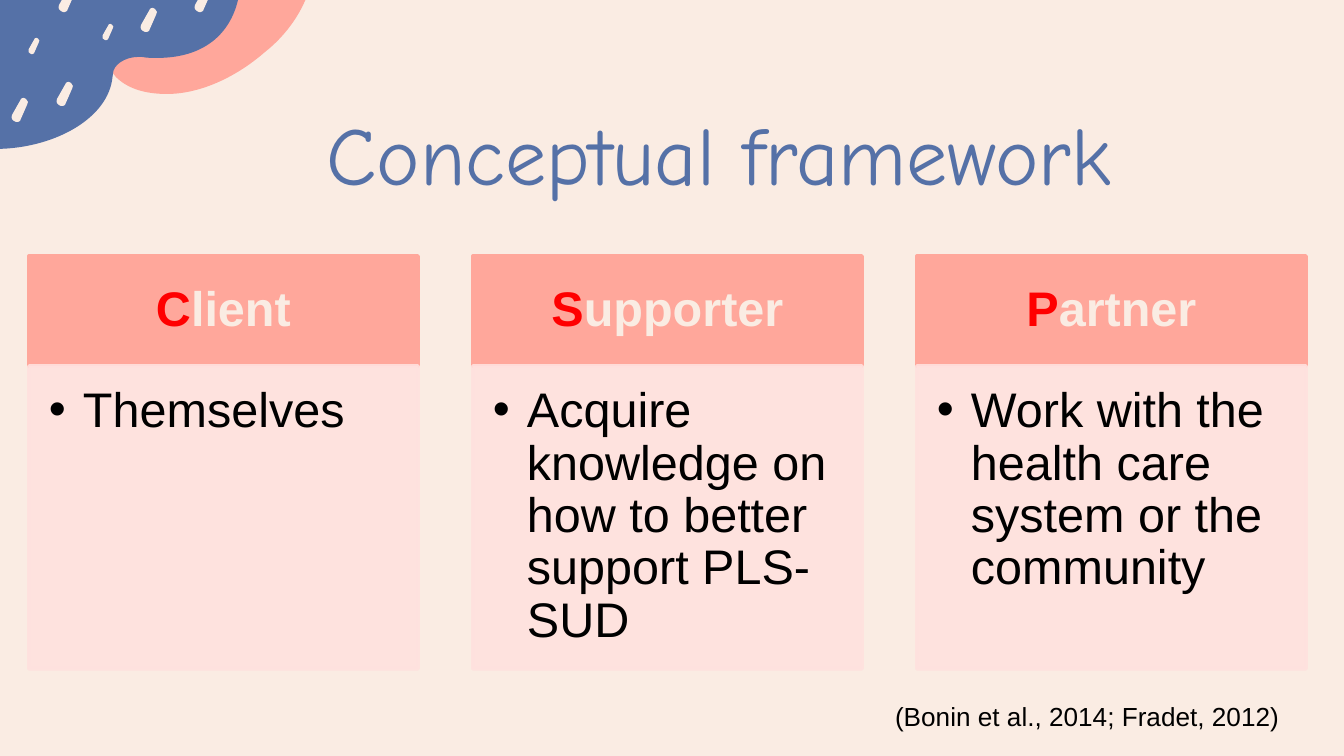
import pptx
import pptx.util
import pptx.dml.color
import pptx.enum.shapes
import pptx.enum.text
import pptx.oxml
import pptx.oxml.ns

PX = 914400 / 134.4  # EMU per px
NS = pptx.oxml.ns.nsdecls("a")
ALIGN = pptx.enum.text.PP_ALIGN
ANCHOR = pptx.enum.text.MSO_ANCHOR
RECT = pptx.enum.shapes.MSO_SHAPE.RECTANGLE


def color(fill, hex_value):
    """Set a solid colour on a fill."""
    fill.solid()
    fill.fore_color.rgb = pptx.dml.color.RGBColor.from_string(hex_value)


def add_text(box, runs, size, font, align, anchor, insets):
    """Add a text box with one paragraph of (text, colour, bold) runs."""
    sp = s.shapes.add_textbox(*[round(v * PX) for v in box])
    tf = sp.text_frame
    tf.word_wrap = True
    tf.vertical_anchor = anchor
    tf.margin_left, tf.margin_top, tf.margin_right, tf.margin_bottom = [
        round(v * PX) for v in insets]
    p = tf.paragraphs[0]
    p.alignment = align
    for text, hex_value, bold in runs:
        r = p.add_run()
        r.text = text
        r.font.size = pptx.util.Pt(size)
        r.font.name = font
        r.font.bold = bold
        color(r.font.fill, hex_value)
    return p


prs = pptx.Presentation()
prs.slide_width, prs.slide_height = round(1344 * PX), round(756 * PX)
s = prs.slides.add_slide(prs.slide_layouts[6])
color(s.background.fill, "FAECE3")

# Corner outlines: a pair is a straight line, six numbers are a Bezier curve
pink = [(13, 103), (-4, 103, -20, 95, -34, 83), (-63, 58, -52, 4, -9, -35),
        (-8, -36), (-1, -42, 3, -50, 4, -56), (8, -93, 34, -134, 78, -165),
        (106, -185, 141, -196, 171, -198), (310, -13),
        (304, 9, 288, 34, 265, 52), (234, 79, 198, 94, 167, 94),
        (146, 94, 128, 89, 116, 77), (114, 75, 113, 73, 112, 71),
        (109, 67, 103, 66, 99, 66), (93, 66, 85, 69, 78, 74), (77, 75),
        (55, 94, 34, 103, 13, 103)]
blue = [(-5, 149), (-12, 149, -17, 149, -23, 149),
        (-54, 145, -81, 136, -99, 121), (-93, -110),
        (-67, -126, -32, -138, 3, -138), (3, -138, 3, -138, 4, -138),
        (56, -138, 101, -120, 125, -93), (130, -87, 138, -83, 146, -83),
        (148, -82), (207, -77, 247, -39, 238, 0), (230, 34, 204, 58, 157, 58),
        (152, 58, 147, 58, 142, 57), (141, 57), (140, 57, 139, 57, 138, 57),
        (125, 57, 113, 65, 113, 74), (113, 77, 112, 78, 112, 81),
        (105, 121, 51, 149, -5, 149)]
dash = [(7, 24), (7, 24, 5, 24, 5, 24), (3, 23), (1, 23, 0, 20, 1, 17), (9, 3),
        (9, 1, 11, 0, 12, 0), (12, 0, 12, 0, 13, 0), (15, 1),
        (17, 3, 18, 5, 16, 7), (9, 23), (8, 23, 8, 24, 7, 24)]

# Corner decoration: outline, colour, left, top, scale
decoration = [(pink, "FFA79B", 0, 0, 1), (blue, "5571A7", 0, 0, 1)]
decoration += [(dash, "FAECE3", x, y, k) for x, y, k in [
    (194, -12, 1), (11, 98, 1), (58, -12, 1), (56, 82, 1), (140, 8, 1),
    (102, 24, 0.67), (28, 38, 0.67)]]
for outline, fill, left, top, scale in decoration:
    segments = [[(round((left + x * scale) * PX), round((top + y * scale) * PX))
                 for x, y in zip(seg[::2], seg[1::2])] for seg in outline]
    knots = [seg[-1] for seg in segments]
    fb = s.shapes.build_freeform(*knots[0])
    fb.add_line_segments(knots[1:], close=True)
    sp = fb.convert_to_shape()
    sp.shadow.inherit = False
    color(sp.fill, fill)
    sp.line.fill.background()
    # Bend the straight segments into their curves
    lines = list(sp._element.iter(pptx.oxml.ns.qn("a:lnTo")))
    for line, seg in zip(lines, segments[1:]):
        if len(seg) == 3:
            pts = "".join('<a:pt x="%d" y="%d"/>' % (x - sp.left, y - sp.top)
                          for x, y in seg)
            curve = pptx.oxml.parse_xml(
                "<a:cubicBezTo %s>%s</a:cubicBezTo>" % (NS, pts))
            line.getparent().replace(line, curve)

# Title
add_text((232, 97, 880, 112), [("Conceptual framework", "5571A7", False)], 44,
         "Comic Neue", ALIGN.RIGHT, ANCHOR.MIDDLE, (0, 0, 0, 0))

# Three columns: header with a red initial, then a bulleted body
columns = [("Client", "Themselves"),
           ("Supporter", "Acquire knowledge on how to better support PLS-SUD"),
           ("Partner", "Work with the health care system or the community")]
for i, (head, body) in enumerate(columns):
    left = 29 + 444 * i
    header, panel = (left, 256, 389, 110), (left, 366, 389, 303)
    for box, fill, runs in [
            (header, "FFA79B", [(head[0], "FF0000", True), (head[1:], "FAECE3", True)]),
            (panel, "FFE1DE", [(body, "000000", False)])]:
        sp = s.shapes.add_shape(RECT, *[round(v * PX) for v in box])
        sp.shadow.inherit = False
        color(sp.fill, fill)
        color(sp.line.fill, fill)
        sp.line.width = pptx.util.Pt(2)
        if box == header:
            p = add_text(box, runs, 26, "Arial", ALIGN.CENTER, ANCHOR.MIDDLE,
                         (27, 16, 27, 16))
        else:
            # Body fill and line at 90 % opacity
            for clr in sp._element.spPr.iter(pptx.oxml.ns.qn("a:srgbClr")):
                clr.append(pptx.oxml.parse_xml('<a:alpha %s val="90000"/>' % NS))
            p = add_text(box, runs, 26, "Arial", ALIGN.LEFT, ANCHOR.TOP,
                         (20, 20, 27, 31))
            p.level = 1
            pPr = p._p.get_or_add_pPr()
            pPr.set("marL", str(round(34 * PX)))
            pPr.set("indent", str(round(-34 * PX)))
            for xml in ('<a:buClr %s><a:srgbClr val="000000"/></a:buClr>',
                        '<a:buFont %s typeface="Arial"/>',
                        '<a:buChar %s char="•"/>'):
                pPr.append(pptx.oxml.parse_xml(xml % NS))
        p.line_spacing = 0.9

# Citation
add_text((882, 693, 722, 46), [("(Bonin et al., 2014; Fradet, 2012)", "000000", False)],
         14, "Arial", ALIGN.LEFT, ANCHOR.TOP, (13, 7, 13, 7))

prs.save("out.pptx")
